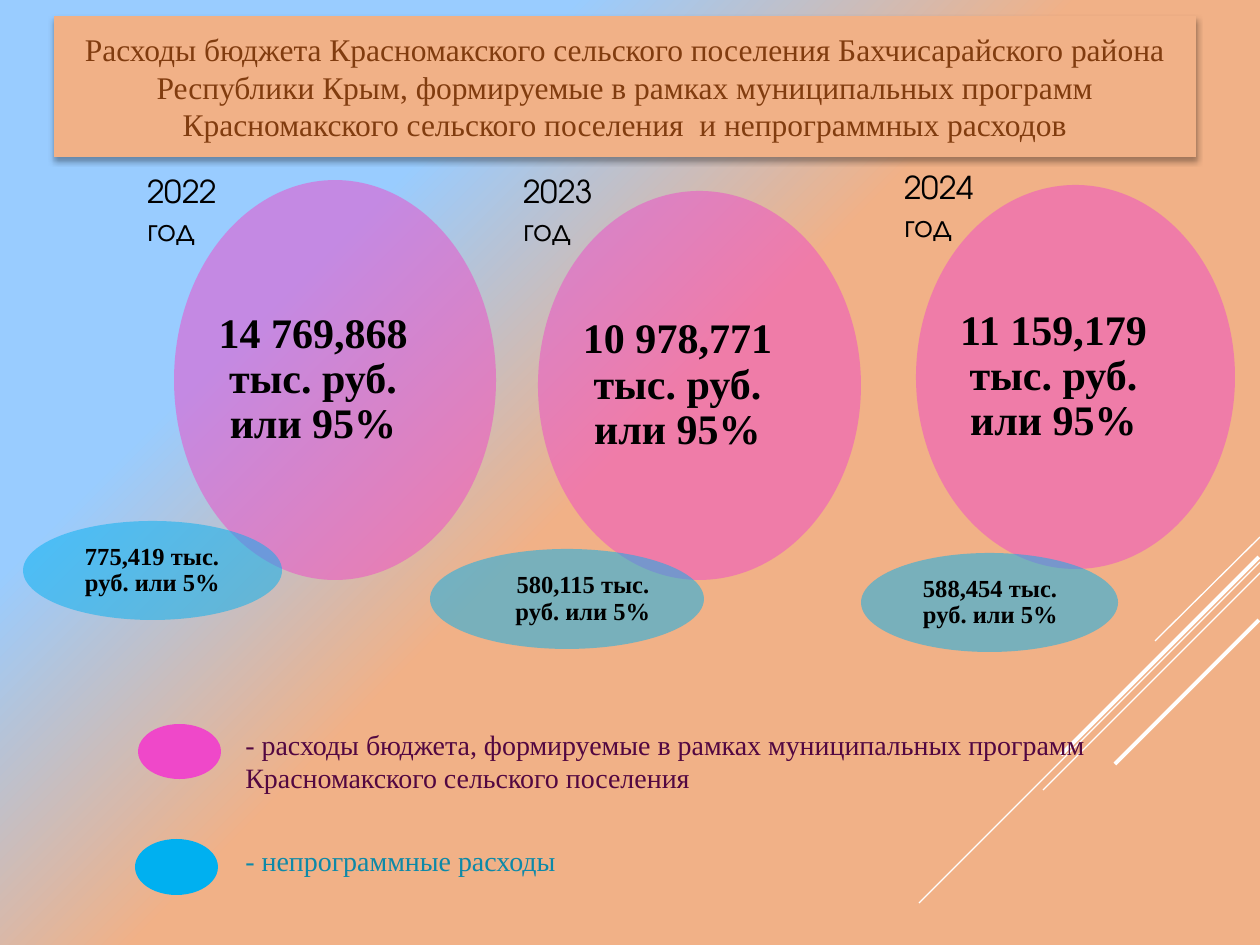
from typing import NamedTuple

from pptx import Presentation
from pptx.dml.color import RGBColor
from pptx.enum.shapes import MSO_CONNECTOR, MSO_SHAPE
from pptx.enum.text import MSO_ANCHOR, MSO_AUTO_SIZE, PP_ALIGN
from pptx.oxml import parse_xml
from pptx.oxml.ns import nsdecls
from pptx.util import Emu, Pt

PX = 914400 / 126
SERIF, SANS = "Times New Roman", "TeX Gyre Adventor"
PINK, BLUE, ORANGE = "EF48C9", "00B0F0", "F1B187"
ELLIPSE_INSET = 0.1464  # share of an ellipse's side outside its text area


class Box(NamedTuple):
    x: int
    y: int
    w: int
    h: int


class Year(NamedTuple):
    label: str
    label_at: tuple[int, int]
    program: str
    program_box: Box
    other: str
    other_box: Box
    other_align: PP_ALIGN


class Stripe(NamedTuple):
    x1: int
    y1: int
    x2: int
    y2: int
    width: float


class LegendItem(NamedTuple):
    marker: Box
    fill: str
    text_box: Box
    text: str
    color: str


YEARS = [
    Year("2022 год", (135, 166), "14 769,868 тыс. руб. или 95%", Box(174, 180, 322, 400),
         "775,419 тыс. руб. или 5%", Box(23, 521, 259, 99), PP_ALIGN.LEFT),
    Year("2023 год", (511, 166), "10 978,771 тыс. руб. или 95%", Box(538, 191, 323, 389),
         "580,115 тыс. руб. или 5%", Box(430, 549, 274, 100), PP_ALIGN.CENTER),
    Year("2024 год", (892, 162), "11 159,179 тыс. руб. или 95%", Box(916, 185, 319, 384),
         "588,454 тыс. руб. или 5%", Box(861, 553, 257, 99), PP_ALIGN.LEFT),
]
STRIPES = [
    Stripe(1260, 537, 1155, 641, 0.75),
    Stripe(1260, 562, 919, 903, 0.75),
    Stripe(1260, 573, 1043, 790, 0.75),
    Stripe(1259, 557, 1061, 755, 2.25),
    Stripe(1259, 620, 1115, 764, 2.25),
]
LEGEND = [
    LegendItem(Box(138, 724, 83, 55), PINK, Box(233, 721, 953, 81),
               "- расходы бюджета, формируемые в рамках муниципальных программ "
               "Красномакского сельского поселения", "520741"),
    LegendItem(Box(135, 839, 83, 56), BLUE, Box(233, 837, 853, 47),
               "- непрограммные расходы", "0D89A8"),
]


def px(n: float) -> Emu:
    return Emu(round(n * PX))


def rgb(color: str) -> RGBColor:
    return RGBColor.from_string(color)


def set_fill(sp, color: str, alpha: int = 100) -> None:
    sp.fill.solid()
    sp.fill.fore_color.rgb = rgb(color)
    if alpha < 100:
        clr = sp.fill._xPr.find(".//{*}srgbClr")
        clr.append(parse_xml(f'<a:alpha {nsdecls("a")} val="{alpha * 1000}"/>'))


def write(sp, text: str, color: str = "000000", align: PP_ALIGN = PP_ALIGN.LEFT,
          spacing: float | None = None, **font) -> None:
    tf = sp.text_frame
    tf.word_wrap = True
    p = tf.paragraphs[0]
    p.alignment = align
    p.line_spacing = spacing
    r = p.add_run()
    r.text = text
    for name, value in font.items():
        setattr(r.font, name, value)
    r.font.color.rgb = rgb(color)


def add_background(slide) -> None:
    slide.element.cSld.insert(0, parse_xml(
        f'<p:bg {nsdecls("p", "a")}><p:bgPr><a:gradFill rotWithShape="1"><a:gsLst>'
        f'<a:gs pos="51000"><a:srgbClr val="{ORANGE}"/></a:gs>'
        '<a:gs pos="74000"><a:srgbClr val="99CCFF"/></a:gs></a:gsLst>'
        '<a:path path="circle"><a:fillToRect l="100000" t="100000"/></a:path>'
        '</a:gradFill><a:effectLst/></p:bgPr></p:bg>'))


def add_stripe(slide, s: Stripe) -> None:
    line = slide.shapes.add_connector(MSO_CONNECTOR.STRAIGHT, *map(px, s[:4]))
    line.line.color.rgb = rgb("FFFFFF")
    line.line.width = Pt(s.width)
    line._element.spPr.append(parse_xml(f'<a:effectLst {nsdecls("a")}/>'))


def add_title(slide, box: Box, text: str) -> None:
    """Turn the title placeholder into a rounded panel with a soft shadow."""
    sp = slide.shapes.title
    sp.left, sp.top, sp.width, sp.height = map(px, box)
    spPr = sp._element.spPr
    spPr.append(parse_xml(
        f'<a:prstGeom {nsdecls("a")} prst="roundRect"><a:avLst/></a:prstGeom>'))
    set_fill(sp, ORANGE)
    spPr.append(parse_xml(
        f'<a:effectLst {nsdecls("a")}><a:outerShdw blurRad="{Pt(3.5)}" dist="{Pt(2.2)}" '
        'dir="5400000" rotWithShape="0"><a:srgbClr val="000000"><a:alpha val="32000"/>'
        '</a:srgbClr></a:outerShdw></a:effectLst>'))
    sp.text_frame.auto_size = MSO_AUTO_SIZE.NONE
    sp.text_frame.vertical_anchor = MSO_ANCHOR.MIDDLE
    write(sp, text, "813C0F", PP_ALIGN.CENTER, name=SERIF, size=Pt(18))


def add_ellipse(slide, box: Box, color: str, alpha: int = 100):
    sp = slide.shapes.add_shape(MSO_SHAPE.OVAL, *map(px, box))
    sp.shadow.inherit = False
    sp.line.fill.background()
    set_fill(sp, color, alpha)
    return sp


def add_bubble(slide, box: Box, color: str, text: str, size: int,
               insets: tuple[int, int, int], align: PP_ALIGN) -> None:
    """Draw a translucent ellipse; insets (left, right, vertical) count from its box."""
    sp = add_ellipse(slide, box, color, 50)
    left, right, vertical = insets
    dx, dy = box.w * ELLIPSE_INSET, box.h * ELLIPSE_INSET
    frame = {
        "margin_left": px(left - dx), "margin_right": px(right - dx),
        "margin_top": px(vertical - dy), "margin_bottom": px(vertical - dy),
        "vertical_anchor": MSO_ANCHOR.MIDDLE,
    }
    for name, value in frame.items():
        setattr(sp.text_frame, name, value)
    write(sp, text, align=align, spacing=0.9, name=SERIF, size=Pt(size), bold=True)


def add_text(slide, box: Box, text: str, color: str, font: str, size: int) -> None:
    sp = slide.shapes.add_textbox(*map(px, box))
    write(sp, text, color, name=font, size=Pt(size))


def add_year(slide, year: Year) -> None:
    add_bubble(slide, year.program_box, PINK, year.program, 24, (43, 87, 38), PP_ALIGN.CENTER)
    add_bubble(slide, year.other_box, BLUE, year.other, 14, (62, 30, 23), year.other_align)
    add_text(slide, Box(*year.label_at, 139, 89), year.label, "000000", SANS, 18)


def main() -> None:
    prs = Presentation()
    prs.slide_width, prs.slide_height = px(1260), px(945)
    slide = prs.slides.add_slide(prs.slide_layouts[5])
    add_background(slide)
    for stripe in STRIPES:
        add_stripe(slide, stripe)
    add_title(slide, Box(54, 16, 1142, 141),
              "Расходы бюджета Красномакского сельского поселения Бахчисарайского района "
              "Республики Крым, формируемые в рамках муниципальных программ "
              "Красномакского сельского поселения  и непрограммных расходов")
    for item in LEGEND:
        add_ellipse(slide, item.marker, item.fill)
        add_text(slide, item.text_box, item.text, item.color, SERIF, 16)
    for year in YEARS:
        add_year(slide, year)
    prs.save("out.pptx")


if __name__ == "__main__":
    main()
